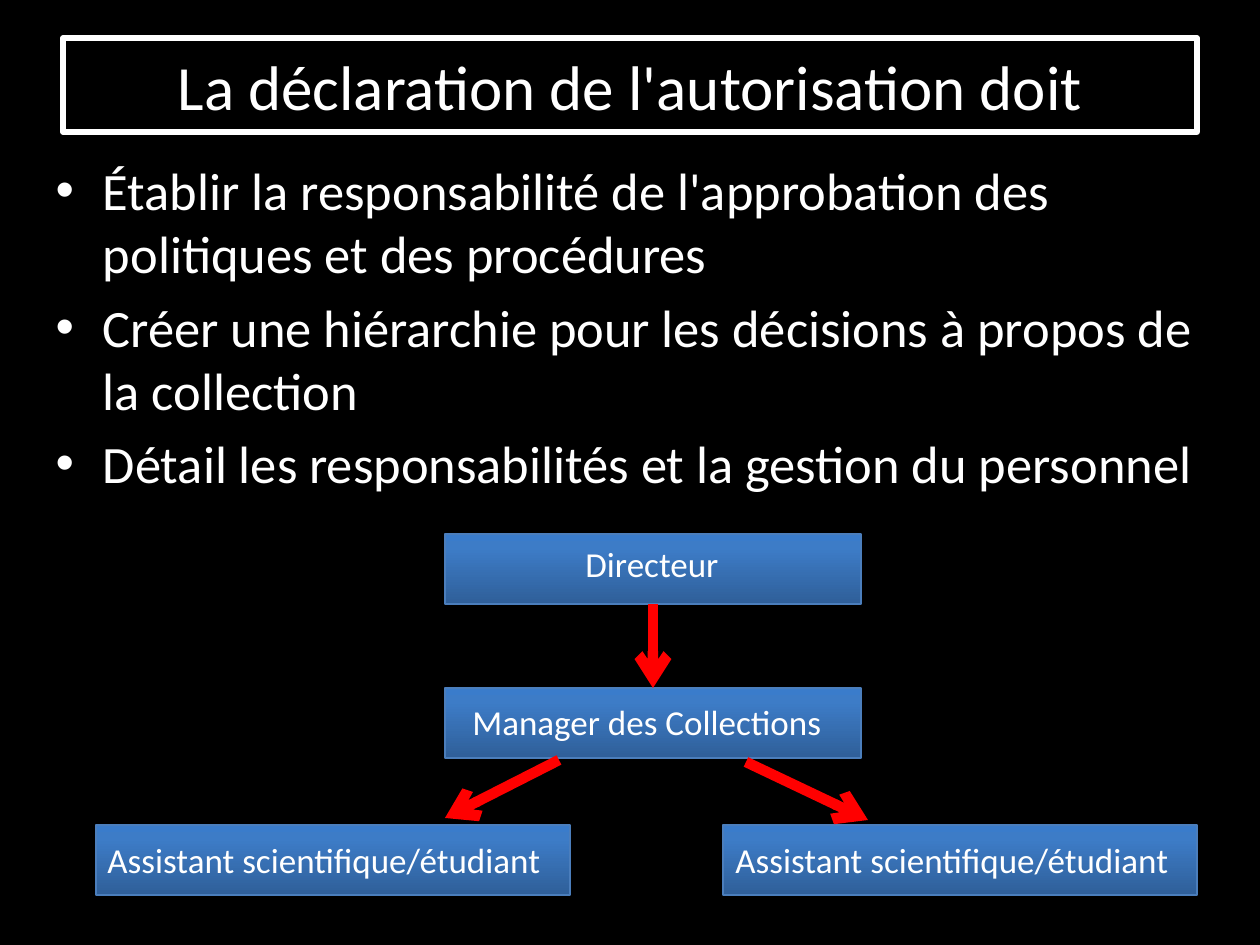
from copy import deepcopy

from lxml.etree import SubElement
from pptx import Presentation
from pptx.dml.color import RGBColor
from pptx.enum.shapes import MSO_CONNECTOR, MSO_SHAPE
from pptx.enum.text import MSO_ANCHOR, MSO_AUTO_SIZE, PP_ALIGN
from pptx.oxml.ns import qn
from pptx.util import Emu, Inches, Pt

BLACK = RGBColor(0x00, 0x00, 0x00)
WHITE = RGBColor(0xFF, 0xFF, 0xFF)
RED = RGBColor(0xFF, 0x00, 0x00)
BOX_LINE = RGBColor(0x4B, 0x7E, 0xBC)
BOX_STOPS = [
    (0, RGBColor(0x2F, 0x5F, 0x99)),
    (0.8, RGBColor(0x3D, 0x7C, 0xC7)),
    (1, RGBColor(0x3A, 0x7C, 0xCB)),
]
FONT = "Calibri"
TITLE = "La déclaration de l'autorisation doit"
DUTIES = [
    "Établir la responsabilité de l'approbation des politiques et des procédures",
    "Créer une hiérarchie pour les décisions à propos de la collection",
    "Détail les responsabilités et la gestion du personnel",
]
ASSISTANT = "Assistant scientifique/étudiant"


def px(n):
    """Turn pixels into EMU at 126 pixels to the inch."""
    return Emu(round(n * 914400 / 126))


class Deck:
    """Holds the style and the current slide."""

    def __init__(self, prs):
        """Add a title and content slide with a black background."""
        self.s = prs.slides.add_slide(prs.slide_layouts[1])
        self.s.background.fill.solid()
        self.s.background.fill.fore_color.rgb = BLACK

    def place(self, sp, x, y, w, h):
        """Move and size a placeholder."""
        sp.left, sp.top, sp.width, sp.height = px(x), px(y), px(w), px(h)

    def style(self, tf, size):
        """Format every run of a text frame."""
        for p in tf.paragraphs:
            for r in p.runs:
                r.font.name = FONT
                r.font.size = Pt(size)
                r.font.color.rgb = WHITE

    def title(self, text, *at):
        """Fill the title placeholder and outline it."""
        sp = self.s.shapes.title
        self.place(sp, *at)
        sp.line.color.rgb = WHITE
        sp.line.width = Pt(3)
        tf = sp.text_frame
        tf.text = text
        tf.auto_size = MSO_AUTO_SIZE.NONE
        tf.vertical_anchor = MSO_ANCHOR.MIDDLE
        tf.paragraphs[0].alignment = PP_ALIGN.CENTER
        self.style(tf, 36)

    def bullets(self, items, *at):
        """Fill the body placeholder with a bulleted list."""
        sp = self.s.placeholders[1]
        self.place(sp, *at)
        tf = sp.text_frame
        tf.text = "\n".join(items)
        tf.auto_size = MSO_AUTO_SIZE.NONE
        self.style(tf, 30)

    def box(self, x, y, w, h=70):
        """Draw a box with a vertical blue gradient."""
        sp = self.s.shapes.add_shape(MSO_SHAPE.RECTANGLE, px(x), px(y), px(w), px(h))
        sp.shadow.inherit = False
        sp.line.color.rgb = BOX_LINE
        sp.line.width = Pt(0.75)
        sp.fill.gradient()
        sp.fill.gradient_angle = 90
        stops = sp._element.spPr.find(".//" + qn("a:gsLst"))
        stops.insert(1, deepcopy(stops[0]))
        for stop, (position, color) in zip(sp.fill.gradient_stops, BOX_STOPS):
            stop.position = position
            stop.color.rgb = color
        return sp

    def label(self, text, x, y, w, h=55):
        """Write a one-line label."""
        tf = self.s.shapes.add_textbox(px(x), px(y), px(w), px(h)).text_frame
        tf.text = text
        tf.word_wrap = False
        tf.auto_size = MSO_AUTO_SIZE.SHAPE_TO_FIT_TEXT
        self.style(tf, 20)

    def arrow(self, x1, y1, x2, y2):
        """Draw a thick red arrow."""
        c = self.s.shapes.add_connector(
            MSO_CONNECTOR.STRAIGHT, px(x1), px(y1), px(x2), px(y2))
        c.line.color.rgb = RED
        c.line.width = Pt(6)
        SubElement(c.line._get_or_add_ln(), qn("a:tailEnd"), type="arrow")
        SubElement(c._element.spPr, qn("a:effectLst"))
        return c


def main():
    """Build the slide and save it."""
    prs = Presentation()
    prs.slide_width, prs.slide_height = Inches(10), Inches(7.5)
    deck = Deck(prs)
    deck.title(TITLE, 63, 38, 1134, 94)
    deck.bullets(DUTIES, 43, 152, 1173, 379)

    director = deck.box(445, 534, 416)
    manager = deck.box(445, 688, 416)
    for x in (96, 723):
        deck.box(x, 825, 474)

    deck.arrow(559, 760, 445, 818)
    deck.arrow(746, 762, 868, 820)
    down = deck.arrow(653, 604, 653, 688)
    down.begin_connect(director, 2)
    down.end_connect(manager, 0)

    deck.label("Directeur", 573, 536, 160)
    deck.label("Manager des Collections", 460, 694, 378)
    for x in (95, 723):
        deck.label(ASSISTANT, x, 832, 465)
    prs.save("out.pptx")


if __name__ == "__main__":
    main()
